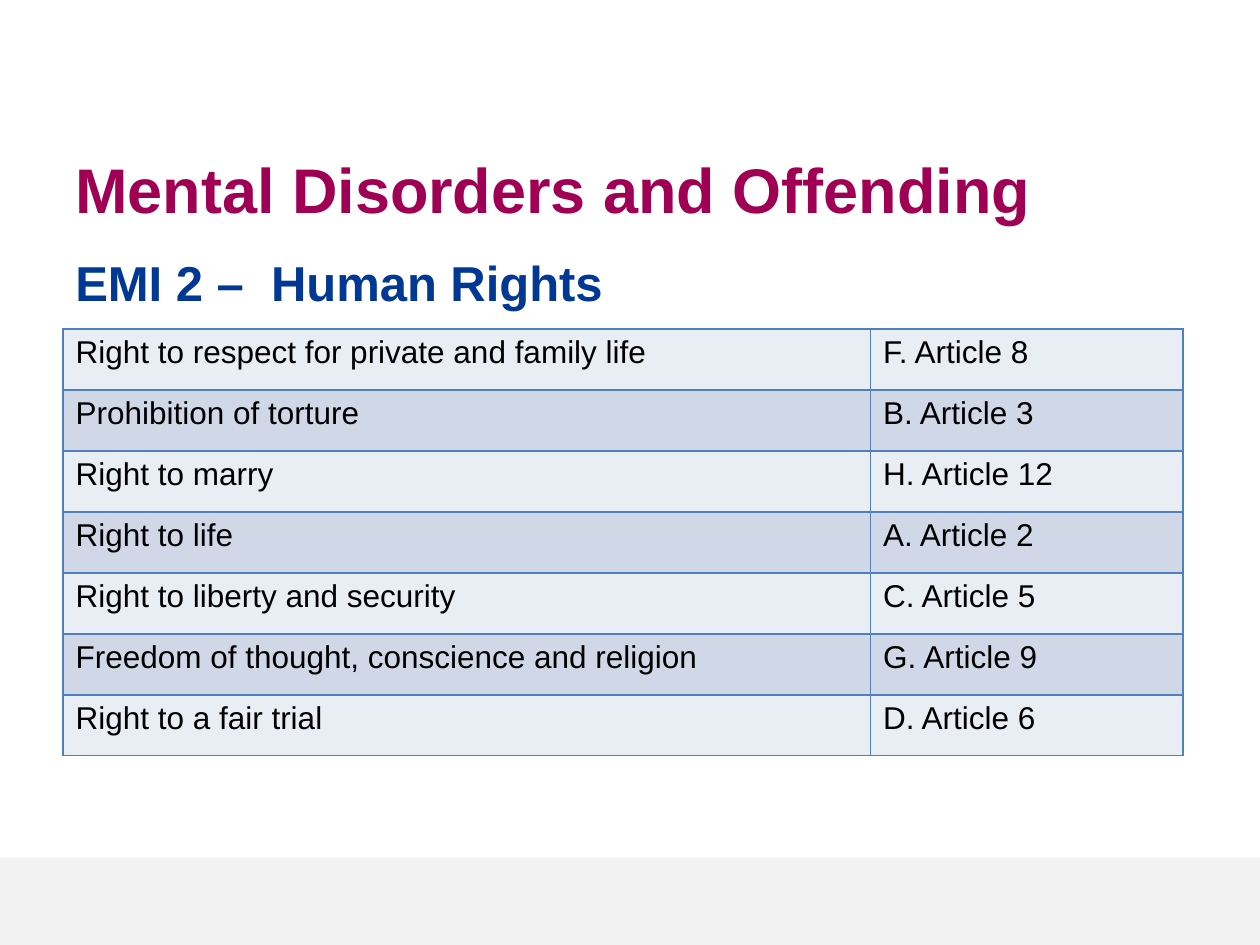
from pptx import Presentation
from pptx.dml.color import RGBColor
from pptx.enum.shapes import MSO_SHAPE as Shape
from pptx.enum.text import MSO_ANCHOR as Anchor
from pptx.oxml import parse_xml
from pptx.oxml.ns import nsdecls
from pptx.util import Pt

# Content
TITLE = "Mental Disorders and Offending"
SUB = "EMI 2 –  Human Rights"
ROWS = [
    ("Right to respect for private and family life", "F. Article 8"),
    ("Prohibition of torture", "B. Article 3"),
    ("Right to marry", "H. Article 12"),
    ("Right to life", "A. Article 2"),
    ("Right to liberty and security", "C. Article 5"),
    ("Freedom of thought, conscience and religion", "G. Article 9"),
    ("Right to a fair trial", "D. Article 6"),
]

# Layout and colours
WIDTH, HEIGHT = 720, 540
LEFT = 36
BAND = 50
COLS = (461.5, 178.5)
ROW = 34.85
FILLS = ("E9EDF4", "D0D8E8")
EDGE = "4F81BD"


def color(code):
    return RGBColor.from_string(code)


def paint(part, code):
    part.fill.solid()
    part.fill.fore_color.rgb = color(code)


def write(frame, text, size=18, ink="000000", bold=False):
    frame.word_wrap = True
    para = frame.paragraphs[0]
    para.text = text
    font = para.runs[0].font
    font.name, font.size, font.bold = "Arial", Pt(size), bold
    font.color.rgb = color(ink)


def add_text(text, top, width, height, **style):
    box = slide.shapes.add_textbox(Pt(LEFT), Pt(top), Pt(width), Pt(height))
    write(box.text_frame, text, **style)
    box.text_frame.vertical_anchor = Anchor.MIDDLE


def add_edges(cell):
    props = cell._tc.get_or_add_tcPr()
    for i, side in enumerate(("lnL", "lnR", "lnT", "lnB")):
        props.insert(i, parse_xml(
            f'<a:{side} {nsdecls("a")} w="{Pt(1)}"><a:solidFill>'
            f'<a:srgbClr val="{EDGE}"/></a:solidFill></a:{side}>'))


deck = Presentation()
deck.slide_width, deck.slide_height = Pt(WIDTH), Pt(HEIGHT)
slide = deck.slides.add_slide(deck.slide_layouts[6])

# Footer band
band = slide.shapes.add_shape(
    Shape.RECTANGLE, 0, Pt(HEIGHT - BAND), Pt(WIDTH), Pt(BAND))
band.shadow.inherit = False
paint(band, "F2F2F2")
band.line.fill.background()

# Headings
add_text(TITLE, 81, 612, 53, size=36, ink="A00054", bold=True)
add_text(SUB, 138, 504, 46, size=28, ink="003893", bold=True)

# Table of rights
table = slide.shapes.add_table(
    len(ROWS), len(COLS), Pt(LEFT), Pt(188),
    Pt(sum(COLS)), Pt(ROW * len(ROWS))).table
table.first_row = table.horz_banding = False
for col, width in zip(table.columns, COLS):
    col.width = Pt(width)
for r, texts in enumerate(ROWS):
    table.rows[r].height = Pt(ROW)
    for c, text in enumerate(texts):
        cell = table.cell(r, c)
        write(cell.text_frame, text)
        paint(cell, FILLS[r % 2])
        add_edges(cell)

deck.save("out.pptx")
